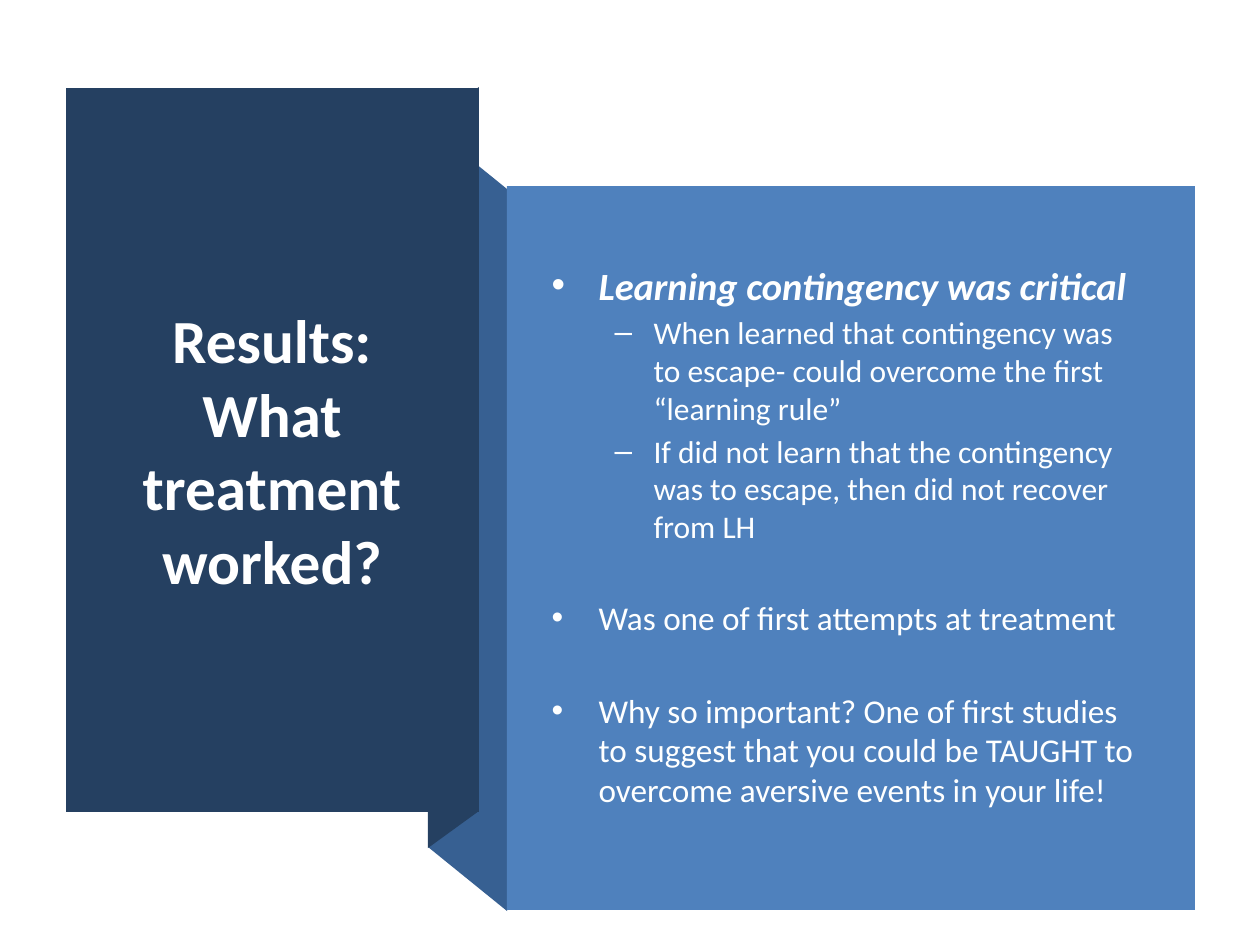
"""Builds the treatment results slide with a folded ribbon panel."""
import pptx
import pptx.util
import pptx.dml.color
import pptx.enum.shapes
import pptx.enum.text

RGB = pptx.dml.color.RGBColor
NAVY = RGB(0x25, 0x40, 0x61)
STEEL = RGB(0x37, 0x60, 0x92)
BLUE = RGB(0x4F, 0x81, 0xBD)
WHITE = RGB(0xFF, 0xFF, 0xFF)
PALE = RGB(0xFE, 0xFF, 0xFF)
UNIT = 914400 / 126


def px(num):
    return pptx.util.Emu(round(num * UNIT))


def paint(shape, color):
    shape.fill.solid()
    shape.fill.fore_color.rgb = color
    shape.line.fill.background()
    shape.shadow.inherit = False


deck = pptx.Presentation()
deck.slide_width, deck.slide_height = px(1260), px(945)
slide = deck.slides.add_slide(deck.slide_layouts[1])
shapes = slide.shapes
title, body = shapes.title, slide.placeholders[1]

folds = [
    (STEEL, [(507, 911), (428, 847), (428, 125), (507, 189)]),
    (NAVY, [(479, 811), (428, 848), (428, 123), (479, 87)]),
    (NAVY, [(66, 88), (479, 88), (479, 812), (66, 812)]),
]
for color, points in folds:
    pen = shapes.build_freeform(*points[0], scale=UNIT)
    pen.add_line_segments(points[1:], close=True)
    paint(pen.convert_to_shape(), color)

panel = shapes.add_shape(pptx.enum.shapes.MSO_SHAPE.RECTANGLE,
                         px(507), px(186), px(688), px(724))
paint(panel, BLUE)

for holder, box in [(title, (97, 135, 350, 629)), (body, (539, 237, 615, 597))]:
    holder.left, holder.top, holder.width, holder.height = map(px, box)
    frame = holder.text_frame
    frame.word_wrap = True
    frame.auto_size = pptx.enum.text.MSO_AUTO_SIZE.NONE
    frame.vertical_anchor = pptx.enum.text.MSO_ANCHOR.MIDDLE
    shapes._spTree.append(holder._element)

para = title.text_frame.paragraphs[0]
para.alignment = pptx.enum.text.PP_ALIGN.CENTER
for line in ["Results:", "What treatment worked?"]:
    if para.runs:
        para.add_line_break()
    run = para.add_run()
    run.text = line
    run.font.name, run.font.size = "Calibri", pptx.util.Pt(35)
    run.font.bold = True
    run.font.color.rgb = WHITE

items = [
    (0, 22, 4, True, "Learning contingency was critical"),
    (1, 18, 3, False, "When learned that contingency was to escape- "
     "could overcome the first “learning rule”"),
    (1, 18, 3, False, "If did not learn that the contingency was to escape, "
     "then did not recover from LH"),
    (0, 19, 30, False, "Was one of first attempts at treatment"),
    (0, 19, 30, False, "Why so important? One of first studies to suggest that "
     "you could be TAUGHT to overcome aversive events in your life!"),
]
insets = [(47, -47), (102, -39)]
for num, (level, size, gap, strong, text) in enumerate(items):
    frame = body.text_frame
    para = frame.add_paragraph() if num else frame.paragraphs[0]
    para.level = level
    para.space_before = pptx.util.Pt(gap)
    props = para._p.get_or_add_pPr()
    for key, inset in zip(("marL", "indent"), insets[level]):
        props.set(key, str(px(inset)))
    run = para.add_run()
    run.text = text
    run.font.name, run.font.size = "Calibri", pptx.util.Pt(size)
    run.font.bold = run.font.italic = strong
    run.font.color.rgb = PALE

deck.save("out.pptx")
